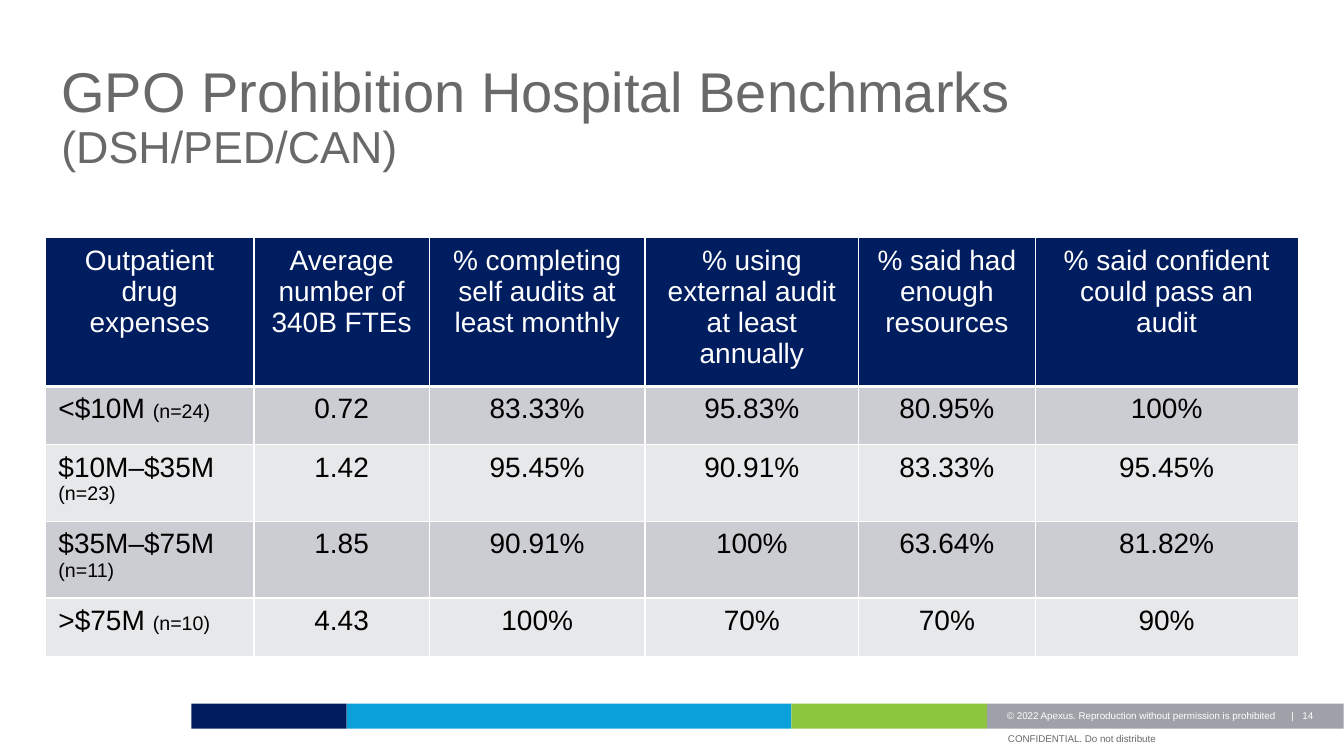
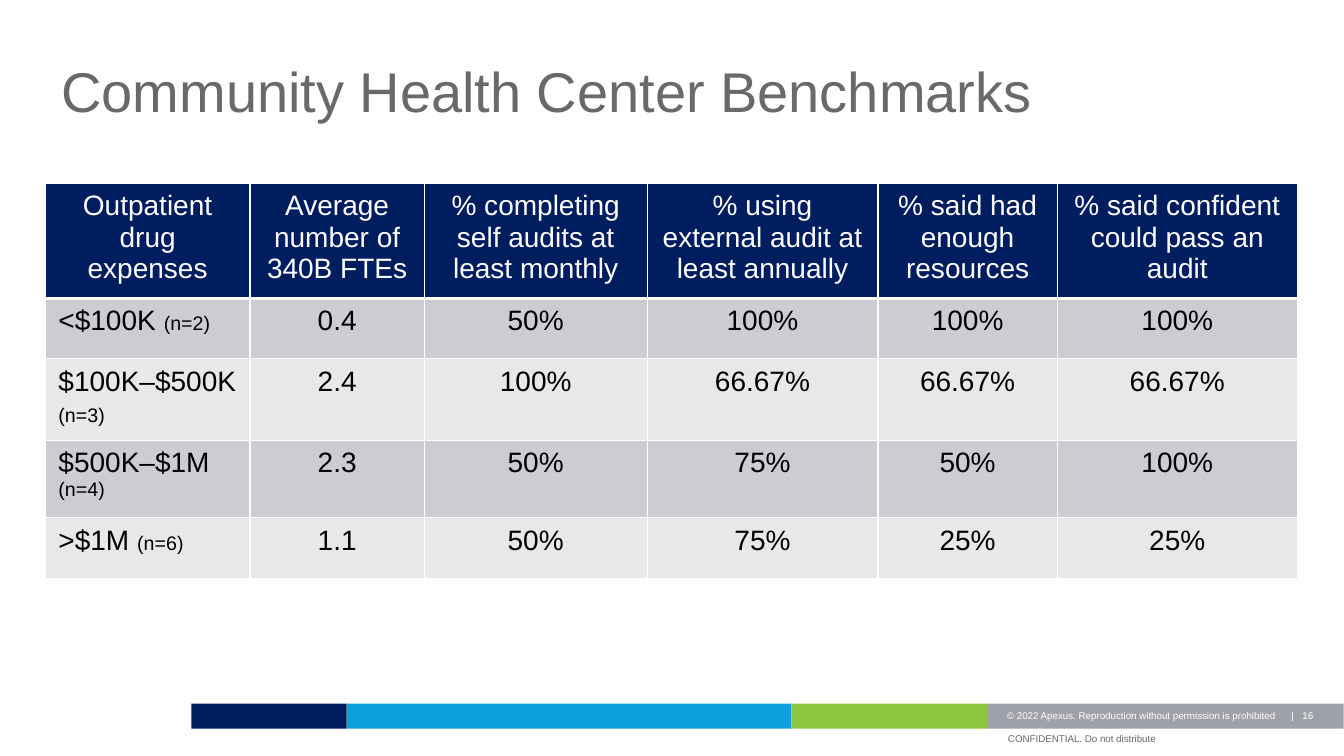
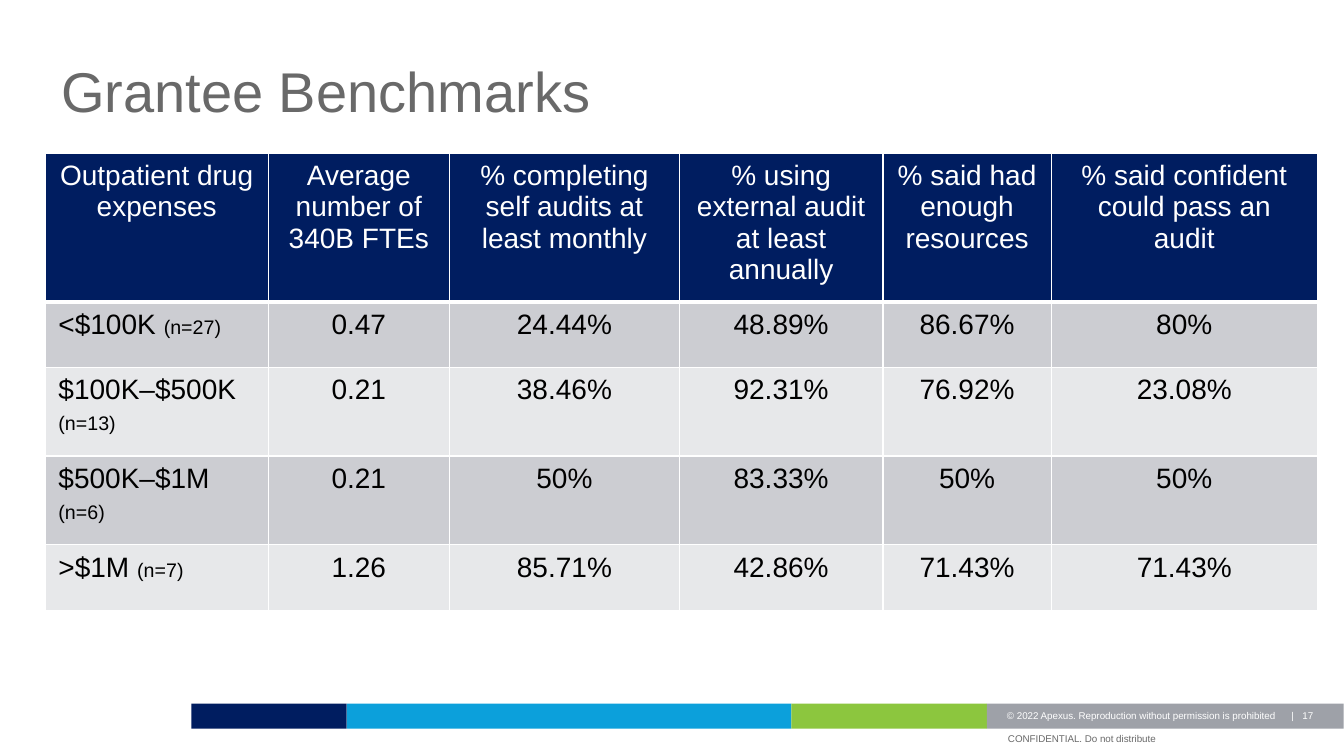
from dataclasses import dataclass
from itertools import accumulate
from typing import NamedTuple

from lxml.etree import SubElement
from pptx import Presentation
from pptx.dml.color import RGBColor
from pptx.enum.shapes import MSO_SHAPE
from pptx.enum.text import MSO_ANCHOR, PP_ALIGN
from pptx.oxml.ns import qn
from pptx.util import Inches, Pt

MODULE = Inches(0.1)
DECK_COLUMNS, DECK_ROWS = 133.33, 75
FONT = "Arial"
COLOURS = {
    "navy": "001D60",
    "blue": "0CA0DB",
    "green": "8CC63E",
    "grey": "9EA1A8",
    "text": "696969",
    "white": "FFFFFF",
    "black": "000000",
    "dark band": "CCCDD2",
    "light band": "E7E8EA",
}
HEADINGS = (
    "Outpatient drug expenses",
    "Average number of 340B FTEs",
    "% completing self audits at least monthly",
    "% using external audit at least annually",
    "% said had enough resources",
    "% said confident could pass an audit",
)


class Span(NamedTuple):
    """A run of text with its size and colour."""

    text: str
    size: float
    colour: str


class Area(NamedTuple):
    """A rectangle in grid columns and rows."""

    left: float
    top: float
    width: float
    height: float


class Band(NamedTuple):
    """One coloured part of the footer strip."""

    colour: str
    columns: float


class Footnote(NamedTuple):
    """A small line of text in the footer."""

    text: str
    area: Area
    colour: str


@dataclass(frozen=True)
class Group:
    """One table row: an expense range, its sample size and its results."""

    expenses: str
    sample: int
    results: tuple[str, ...]
    tall_last_line: bool = False


@dataclass(frozen=True)
class Benchmark:
    """The content of one slide."""

    number: int
    title: tuple[Span, ...]
    top: float
    columns: tuple[float, ...]
    rows: tuple[float, ...]
    groups: tuple[Group, ...]


TITLE_AREA = Area(5.1, 5.9, 123.1, 10)
TABLE_LEFT = 4.5
BAND_LEFT, BAND_TOP, BAND_HEIGHT = 19, 69.8, 2.5
BANDS = (Band("navy", 15.4), Band("blue", 44.1), Band("green", 19.4), Band("grey", 35.4))
FOOTNOTES = (
    Footnote("© 2022 Apexus. Reproduction without permission is prohibited",
             Area(99.9, 70, 33.4, 1.6), "white"),
    Footnote("CONFIDENTIAL. Do not distribute", Area(100, 72.3, 33.3, 1.6), "text"),
)
NUMBER_AREA = Area(108.2, 69.9, 23.1, 2.2)

BENCHMARKS = (
    Benchmark(
        14,
        (Span("GPO Prohibition Hospital Benchmarks ", 40, "text"),
         Span("(DSH/PED/CAN)", 32, "text")),
        23.6,
        (20.7, 17.4, 21.4, 21.2, 17.5, 26.1),
        (13.7, 5.8, 7.6, 7.6, 5.8),
        (
            Group("<$10M", 24, ("0.72", "83.33%", "95.83%", "80.95%", "100%")),
            Group("$10M–$35M", 23, ("1.42", "95.45%", "90.91%", "83.33%", "95.45%")),
            Group("$35M–$75M", 11, ("1.85", "90.91%", "100%", "63.64%", "81.82%")),
            Group(">$75M", 10, ("4.43", "100%", "70%", "70%", "90%")),
        ),
    ),
    Benchmark(
        16,
        (Span("Community Health Center Benchmarks", 40, "text"),),
        18.2,
        (20.3, 17.3, 22.1, 22.9, 17.8, 23.8),
        (10.6, 6, 7.9, 7.7, 6),
        (
            Group("<$100K", 2, ("0.4", "50%", "100%", "100%", "100%")),
            Group("$100K–$500K", 3, ("2.4", "100%", "66.67%", "66.67%", "66.67%"), True),
            Group("$500K–$1M", 4, ("2.3", "50%", "75%", "50%", "100%")),
            Group(">$1M", 6, ("1.1", "50%", "75%", "25%", "25%")),
        ),
    ),
    Benchmark(
        17,
        (Span("Grantee Benchmarks", 40, "text"),),
        15.2,
        (22.1, 18, 22.8, 20.2, 16.7, 26.4),
        (14.7, 6.5, 8.8, 8.8, 6.5),
        (
            Group("<$100K", 27, ("0.47", "24.44%", "48.89%", "86.67%", "80%")),
            Group("$100K–$500K", 13, ("0.21", "38.46%", "92.31%", "76.92%", "23.08%"), True),
            Group("$500K–$1M", 6, ("0.21", "50%", "83.33%", "50%", "50%"), True),
            Group(">$1M", 7, ("1.26", "85.71%", "42.86%", "71.43%", "71.43%")),
        ),
    ),
)


def grid(count: float) -> int:
    """Turn grid modules into a length."""
    return round(count * MODULE)


def place(area: Area) -> tuple[int, ...]:
    """Turn an area into left, top, width and height lengths."""
    return tuple(grid(side) for side in area)


def colour_of(name: str) -> RGBColor:
    """Look up a named colour."""
    return RGBColor.from_string(COLOURS[name])


def write(para, spans: tuple[Span, ...]) -> None:
    """Add spans to a paragraph run by run."""
    for span in spans:
        run = para.add_run()
        run.text = span.text
        run.font.name = FONT
        run.font.size = Pt(span.size)
        run.font.color.rgb = colour_of(span.colour)


def add_text(page, area: Area, spans: tuple[Span, ...]):
    """Add a wrapping text box and return its frame."""
    frame = page.shapes.add_textbox(*place(area)).text_frame
    frame.word_wrap = True
    write(frame.paragraphs[0], spans)
    return frame


def add_title(page, spans: tuple[Span, ...]) -> None:
    """Add the slide title."""
    add_text(page, TITLE_AREA, spans).paragraphs[0].line_spacing = 0.9


def add_number(page, number: int) -> None:
    """Add the slide number after a bar and a tab stop."""
    frame = add_text(page, NUMBER_AREA, ())
    frame.margin_left = grid(19.9)
    para = frame.paragraphs[0]
    stops = SubElement(para._p.get_or_add_pPr(), qn("a:tabLst"))
    SubElement(stops, qn("a:tab"), pos=str(grid(1.1)), algn="l")
    write(para, (Span(f"|\t{number}", 7, "white"),))


def add_footer(page, number: int) -> None:
    """Draw the coloured strip, its footnotes and the slide number."""
    lefts = accumulate((band.columns for band in BANDS), initial=BAND_LEFT)
    for band, left in zip(BANDS, lefts):
        area = Area(left, BAND_TOP, band.columns, BAND_HEIGHT)
        strip = page.shapes.add_shape(MSO_SHAPE.RECTANGLE, *place(area))
        strip.shadow.inherit = False
        strip.fill.solid()
        strip.fill.fore_color.rgb = colour_of(band.colour)
        strip.line.fill.background()
    for note in FOOTNOTES:
        frame = add_text(page, note.area, (Span(note.text, 7, note.colour),))
        frame.vertical_anchor = MSO_ANCHOR.BOTTOM
        frame.margin_left = frame.margin_right = frame.margin_top = frame.margin_bottom = 0
    add_number(page, number)


def add_borders(cell, bottom: float) -> None:
    """Give a cell white borders with its own bottom width."""
    properties = cell._tc.get_or_add_tcPr()
    for position, (side, width) in enumerate(
        {"lnL": 1, "lnR": 1, "lnT": 1, "lnB": bottom}.items()
    ):
        line = SubElement(properties, qn(f"a:{side}"), w=str(Pt(width)))
        fill = SubElement(line, qn("a:solidFill"))
        SubElement(fill, qn("a:srgbClr"), val=COLOURS["white"])
        properties.insert(position, line)


def fill_cell(cell, spans: tuple[Span, ...], fill: str, centred: bool, bottom: float) -> None:
    """Set the fill, margins, borders and text of a cell."""
    cell.fill.solid()
    cell.fill.fore_color.rgb = colour_of(fill)
    cell.margin_left = cell.margin_right = Inches(0.13)
    cell.margin_top = cell.margin_bottom = Inches(0.07)
    add_borders(cell, bottom)
    para = cell.text_frame.paragraphs[0]
    para.alignment = PP_ALIGN.CENTER if centred else PP_ALIGN.LEFT
    write(para, spans)


def expense_spans(group: Group) -> tuple[Span, ...]:
    """Write an expense range followed by its small sample size."""
    spans = (Span(f"{group.expenses} ", 20, "black"), Span(f"(n={group.sample})", 14, "black"))
    return spans + (Span(" ", 20, "black"),) if group.tall_last_line else spans


def add_benchmark_table(page, benchmark: Benchmark) -> None:
    """Add the table of benchmarks."""
    area = Area(TABLE_LEFT, benchmark.top, sum(benchmark.columns), sum(benchmark.rows))
    table = page.shapes.add_table(
        len(benchmark.rows), len(benchmark.columns), *place(area)
    ).table
    table.first_row = table.horz_banding = False
    for column, width in zip(table.columns, benchmark.columns):
        column.width = grid(width)
    for row, height in zip(table.rows, benchmark.rows):
        row.height = grid(height)
    for cell, heading in zip(table.rows[0].cells, HEADINGS):
        fill_cell(cell, (Span(heading, 20, "white"),), "navy", True, 3)
    for index, group in enumerate(benchmark.groups, start=1):
        fill = "dark band" if index % 2 else "light band"
        fill_cell(table.cell(index, 0), expense_spans(group), fill, False, 1)
        for column, result in enumerate(group.results, start=1):
            fill_cell(table.cell(index, column), (Span(result, 20, "black"),), fill, True, 1)


def main() -> None:
    """Build and save the deck."""
    deck = Presentation()
    deck.slide_width, deck.slide_height = grid(DECK_COLUMNS), grid(DECK_ROWS)
    blank = deck.slide_layouts[6]
    for benchmark in BENCHMARKS:
        page = deck.slides.add_slide(blank)
        add_footer(page, benchmark.number)
        add_title(page, benchmark.title)
        add_benchmark_table(page, benchmark)
    deck.save("out.pptx")


if __name__ == "__main__":
    main()
